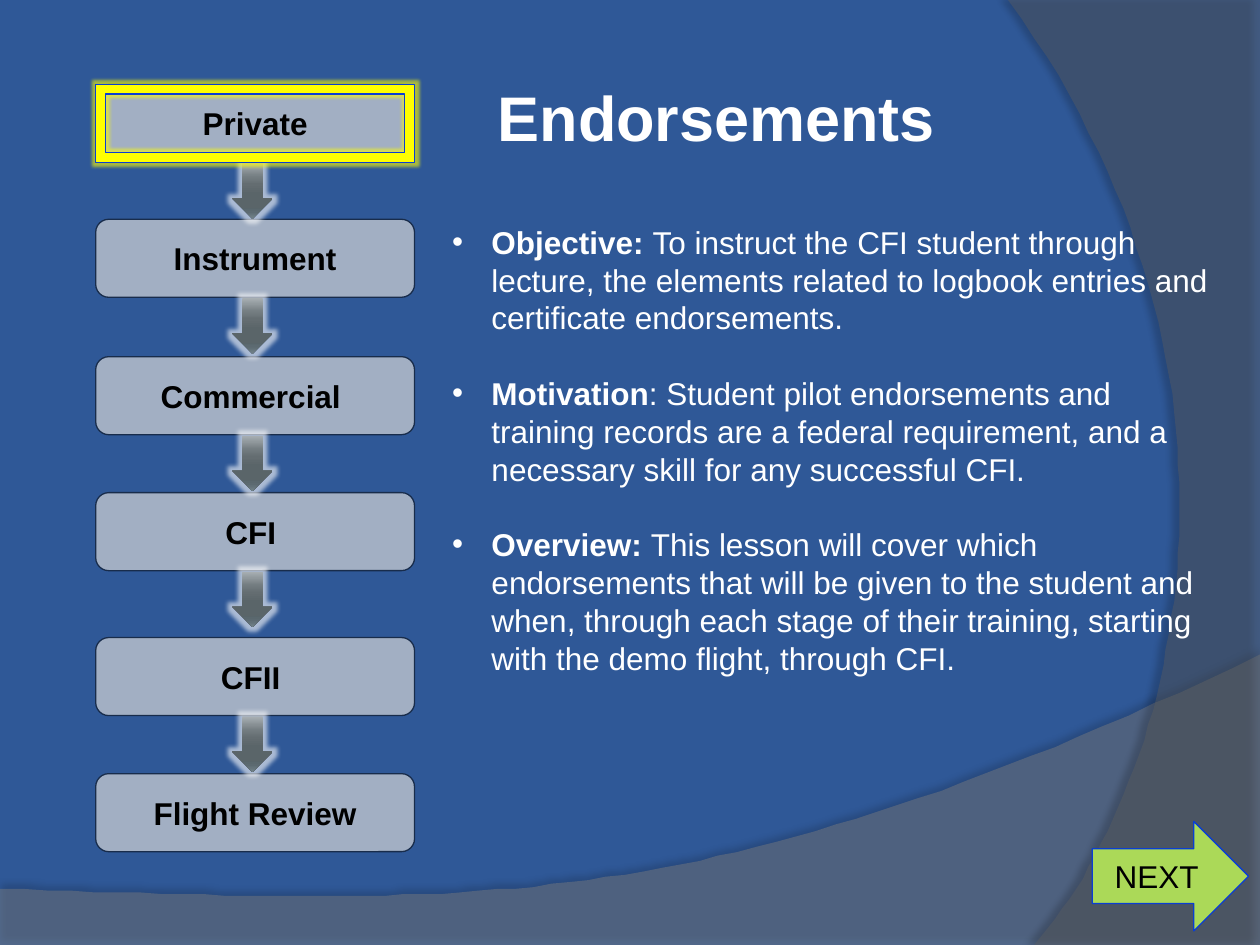
from lxml import etree
from pptx import Presentation
from pptx.dml.color import RGBColor
from pptx.enum.shapes import MSO_SHAPE
from pptx.enum.text import MSO_ANCHOR, PP_ALIGN
from pptx.oxml.ns import qn
from pptx.util import Pt

ROUNDED = MSO_SHAPE.ROUNDED_RECTANGLE
DOWN_ARROW = MSO_SHAPE.DOWN_ARROW
RIGHT_ARROW = MSO_SHAPE.RIGHT_ARROW
FRAME = MSO_SHAPE.FRAME
MIDDLE = MSO_ANCHOR.MIDDLE
CENTER = PP_ALIGN.CENTER

BLUE = RGBColor(0x2F, 0x58, 0x97)
WHITE = RGBColor(0xFF, 0xFF, 0xFF)
BLACK = RGBColor(0x00, 0x00, 0x00)
SILVER = RGBColor(0xD9, 0xD9, 0xD9)
NAVY = RGBColor(0x18, 0x2C, 0x4B)
YELLOW = RGBColor(0xFF, 0xFF, 0x00)
GREEN = RGBColor(0xAB, 0xD9, 0x58)
ROYAL = RGBColor(0x0A, 0x3E, 0xD3)
LOWER_GREY = RGBColor(0x7F, 0x7F, 0x7F)
SIDE_GREY = RGBColor(0x5E, 0x5E, 0x5E)
STEEL = [
    (0, RGBColor(0xA8, 0xAF, 0xB3)),
    (25, RGBColor(0x73, 0x7C, 0x80)),
    (38, RGBColor(0x64, 0x6D, 0x71)),
    (55, RGBColor(0x5A, 0x65, 0x69)),
    (80, RGBColor(0x58, 0x65, 0x6A)),
    (88, RGBColor(0x5C, 0x6A, 0x71)),
    (100, RGBColor(0x72, 0x83, 0x8A)),
]

FONT = "Arial"
BOX_LEFT, BOX_WIDTH, BOX_HEIGHT = 54.7, 182.2, 44.6
STAGES = [
    ("Private", 48.2),
    ("Instrument", 125.3),
    ("Commercial ", 203.8),
    ("CFI ", 281.5),
    ("CFII ", 364.3),
    ("Flight Review", 442.1),
]
POINTS = [
    ("Objective: ", "To instruct the CFI student through lecture, the elements related to "
     "logbook entries and certificate endorsements."),
    ("Motivation", ": Student pilot endorsements and training records are a federal "
     "requirement, and a necessary skill for any successful CFI."),
    ("Overview: ", "This lesson will cover which endorsements that will be given to the "
     "student and when, through each stage of their training, starting with the demo "
     "flight, through CFI."),
]


def add_color(parent, color, alpha=100):
    """Append a colour element with an opacity in percent."""
    node = etree.SubElement(parent, qn("a:srgbClr"), val=str(color))
    if alpha < 100:
        etree.SubElement(node, qn("a:alpha"), val=str(alpha * 1000))


def add_effect(shape, tag, color, alpha, **settings):
    """Give the shape one effect, a glow or an outer shadow."""
    effects = shape._element.spPr.find(qn("a:effectLst"))
    values = {name: str(value) for name, value in settings.items()}
    add_color(etree.SubElement(effects, qn(tag), values), color, alpha)


def paint(shape, color, alpha=100, line=None):
    """Set a flat fill, an optional thin outline and no shadow."""
    shape.shadow.inherit = False
    shape.fill.solid()
    shape.fill.fore_color.rgb = color
    if alpha < 100:
        node = shape._element.spPr.find(qn("a:solidFill"))[0]
        etree.SubElement(node, qn("a:alpha"), val=str(alpha * 1000))
    if line is None:
        shape.line.fill.background()
    else:
        shape.line.color.rgb = line
        shape.line.width = Pt(0.75)


def add_span(para, text, size, color, bold=False):
    """Append one formatted run."""
    span = para.add_run()
    span.text = text
    span.font.name = FONT
    span.font.size = Pt(size)
    span.font.bold = bold
    span.font.color.rgb = color


def add_block(page, kind, left, top, width, height):
    """Add a preset shape measured in points."""
    return page.shapes.add_shape(kind, Pt(left), Pt(top), Pt(width), Pt(height))


def add_label(shape, text, bold):
    """Write a centred black label in a shape."""
    frame = shape.text_frame
    frame.word_wrap = True
    frame.vertical_anchor = MIDDLE
    para = frame.paragraphs[0]
    para.alignment = CENTER
    add_span(para, text, 18, BLACK, bold)


def curve(start, first, second, end, steps=60):
    """Return the points along a cubic curve."""
    shares = [step / steps for step in range(steps + 1)]
    return [
        tuple((1 - t) ** 3 * a + 3 * (1 - t) ** 2 * t * b + 3 * (1 - t) * t ** 2 * c + t ** 3 * d
              for a, b, c, d in zip(start, first, second, end))
        for t in shares
    ]


def add_swoosh(page, points, color, alpha, shade, distance, direction):
    """Draw a translucent curved area with a soft shadow."""
    builder = page.shapes.build_freeform(*points[0], scale=float(Pt(1)))
    builder.add_line_segments(points[1:], close=True)
    swoosh = builder.convert_to_shape()
    paint(swoosh, color, alpha)
    add_effect(swoosh, "a:outerShdw", BLACK, shade, blurRad=Pt(4),
               dist=Pt(distance), dir=direction * 60000, rotWithShape=0)


def add_stage(page, text, top):
    """Add one certificate stage box."""
    box = add_block(page, ROUNDED, BOX_LEFT, top, BOX_WIDTH, BOX_HEIGHT)
    paint(box, SILVER, 68, NAVY)
    add_label(box, text, True)


def add_step_arrow(page, top):
    """Add a glowing steel arrow below a stage box."""
    arrow = add_block(page, DOWN_ARROW, 132.8, top, 23, 31.7)
    arrow.shadow.inherit = False
    arrow.line.fill.background()
    arrow.fill.gradient()
    arrow.fill.gradient_angle = 270
    stops = arrow._element.spPr.find(qn("a:gradFill")).find(qn("a:gsLst"))
    for stop in list(stops):
        stops.remove(stop)
    for position, color in STEEL:
        add_color(etree.SubElement(stops, qn("a:gs"), pos=str(position * 1000)), color)
    add_effect(arrow, "a:glow", WHITE, 60, rad=Pt(5))


def add_title(page, text):
    """Add the heading."""
    box = page.shapes.add_textbox(Pt(280.8), Pt(21.6), Pt(329.8), Pt(90))
    frame = box.text_frame
    frame.word_wrap = True
    frame.vertical_anchor = MIDDLE
    frame.margin_left = frame.margin_right = Pt(3.6)
    add_span(frame.paragraphs[0], text, 36, WHITE, True)


def add_points(page):
    """Add the bulleted lesson summary."""
    box = page.shapes.add_textbox(Pt(251.3), Pt(123.8), Pt(449.3), Pt(290.9))
    frame = box.text_frame
    frame.word_wrap = True
    for index, (heading, body) in enumerate(POINTS):
        para = frame.add_paragraph() if index else frame.paragraphs[0]
        para.line_spacing = Pt(21.6)
        para.space_before = Pt(21.6 if index else 0)
        settings = para._p.get_or_add_pPr()
        settings.set("marL", str(Pt(22.5)))
        settings.set("indent", str(Pt(-22.5)))
        tint = etree.SubElement(settings, qn("a:buClr"))
        add_color(tint, WHITE)
        etree.SubElement(settings, qn("a:buFont"), typeface=FONT)
        etree.SubElement(settings, qn("a:buChar"), char="•")
        add_span(para, heading, 18, WHITE, True)
        add_span(para, body, 18, WHITE)


def main():
    """Build the endorsements slide."""
    deck = Presentation()
    deck.slide_width, deck.slide_height = Pt(720), Pt(540)
    page = deck.slides.add_slide(deck.slide_layouts[6])
    page.background.fill.solid()
    page.background.fill.fore_color.rgb = BLUE

    lower = curve((720, 374.4), (402.5, 524.9), (281.5, 517.7), (0, 507.6))
    add_swoosh(page, [(0, 540), (720, 540)] + lower, LOWER_GREY, 45, 35, 3.5, 270)
    side = curve((591.1, 540), (673.2, 445.7), (733, 216), (576, 0))
    add_swoosh(page, [(720, 0), (720, 540)] + side, SIDE_GREY, 40, 45, 4, 180)

    for text, top in STAGES:
        add_stage(page, text, top)
    for text, top in STAGES[:-1]:
        add_step_arrow(page, top + BOX_HEIGHT + 0.5)
    add_points(page)
    add_title(page, "Endorsements")

    button = add_block(page, RIGHT_ARROW, 624.2, 469.4, 89.3, 62.6)
    paint(button, GREEN, line=ROYAL)
    add_label(button, "NEXT", False)
    highlight = add_block(page, FRAME, BOX_LEFT, STAGES[0][1], BOX_WIDTH, BOX_HEIGHT)
    paint(highlight, YELLOW, line=ROYAL)
    add_effect(highlight, "a:glow", YELLOW, 60, rad=Pt(4))
    deck.save("out.pptx")


if __name__ == "__main__":
    main()
